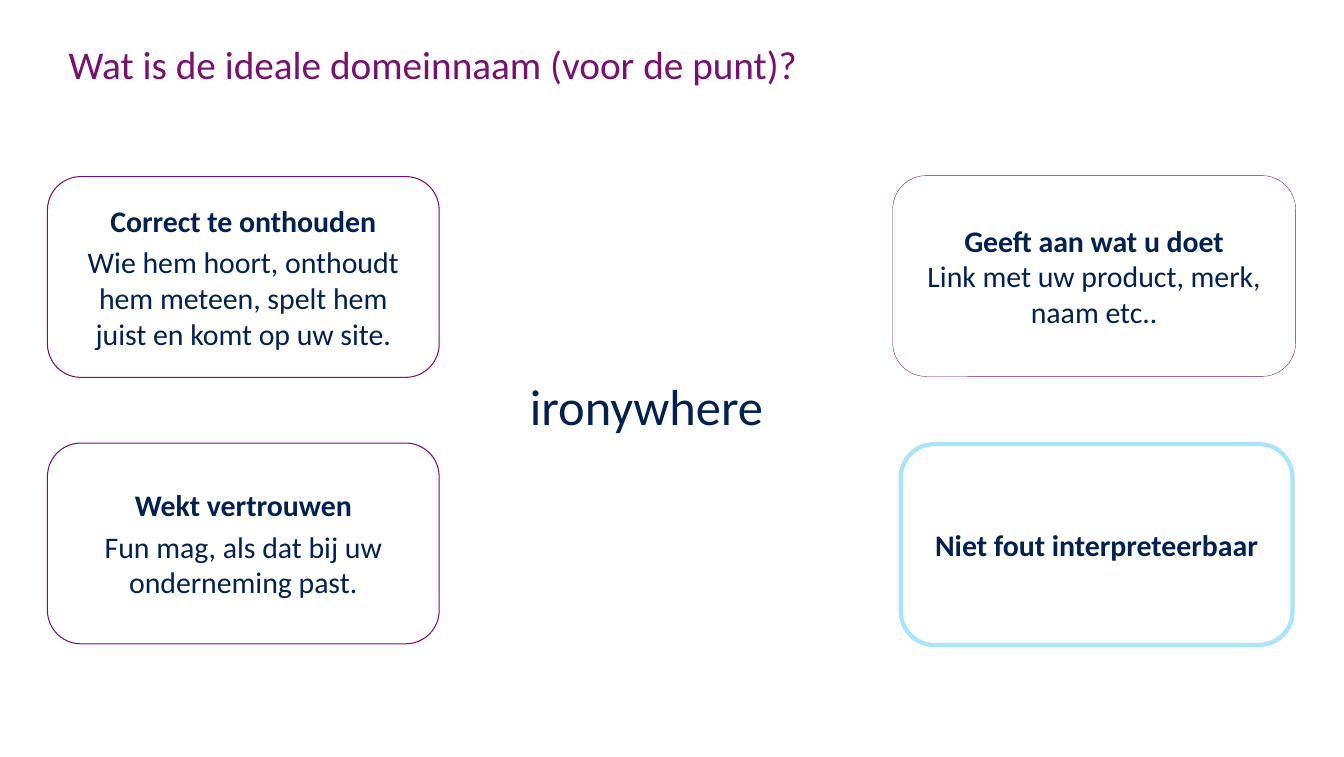
from dataclasses import dataclass

from pptx import Presentation
from pptx.dml.color import RGBColor
from pptx.enum.shapes import MSO_SHAPE
from pptx.enum.text import MSO_ANCHOR, MSO_AUTO_SIZE, PP_ALIGN
from pptx.shapes.autoshape import Shape
from pptx.slide import Slide
from pptx.util import Inches, Pt

ROUND = MSO_SHAPE.ROUNDED_RECTANGLE
MIDDLE, TOP = MSO_ANCHOR.MIDDLE, MSO_ANCHOR.TOP
FIXED = MSO_AUTO_SIZE.NONE
CENTER, LEFT = PP_ALIGN.CENTER, PP_ALIGN.LEFT

PURPLE = RGBColor(0x7B, 0x0F, 0x70)
NAVY = RGBColor(0x00, 0x21, 0x54)
SKY = RGBColor(0xA6, 0xE5, 0xFF)
WHITE = RGBColor(0xFF, 0xFF, 0xFF)

WIDE, HIGH = Inches(13.31), Inches(7.5)


@dataclass(frozen=True)
class Area:
    """A place on the slide, in percent of its width and height."""
    left: float
    top: float
    width: float
    height: float


@dataclass(frozen=True)
class Card:
    area: Area
    head: str
    body: str = ""
    line: RGBColor = PURPLE
    weight: float = 0.75
    joined: bool = False


CARD_W, CARD_H = 29.15, 26.53
CARDS = (
    Card(Area(3.53, 23.33, CARD_W, CARD_H), "Correct te onthouden",
         "Wie hem hoort, onthoudt hem meteen, spelt hem juist en komt op uw site."),
    Card(Area(3.53, 58.53, CARD_W, CARD_H), "Wekt vertrouwen",
         "Fun mag, als dat bij uw onderneming past."),
    Card(Area(66.42, 23.2, 29.98, CARD_H), "Geeft aan wat u doet",
         "Link met uw product, merk, naam etc..", weight=0.25, joined=True),
    Card(Area(67.02, 58.67, CARD_W, CARD_H), "Niet fout interpreteerbaar",
         line=SKY, weight=3),
)
TITLE = Area(3.61, 4.4, 93.76, 9.73)
NAME = Area(38.69, 48.93, 23.67, 9.47)


def style(item: object, **values: object) -> None:
    for key, value in values.items():
        setattr(item, key, value)


def spot(area: Area) -> dict[str, int]:
    return {
        "left": round(WIDE * area.left / 100),
        "top": round(HIGH * area.top / 100),
        "width": round(WIDE * area.width / 100),
        "height": round(HIGH * area.height / 100),
    }


def frame(shape: Shape, side: float, edge: float, anchor: MSO_ANCHOR,
          right: float | None = None) -> None:
    """Set margins in inches; the right one equals the left unless given."""
    style(shape.text_frame, word_wrap=True, auto_size=FIXED,
          vertical_anchor=anchor, margin_left=Inches(side),
          margin_right=Inches(side if right is None else right),
          margin_top=Inches(edge), margin_bottom=Inches(edge))


def write(para: object, text: str, size: float, color: RGBColor,
          bold: bool = False) -> None:
    run = para.add_run()
    run.text = text
    style(run.font, name="Calibri", size=Pt(size), bold=bold)
    run.font.color.rgb = color


def draw_title(slide: Slide) -> None:
    title = slide.shapes.title
    style(title, **spot(TITLE))
    frame(title, 0.2, 0, MIDDLE, right=0.12)
    para = title.text_frame.paragraphs[0]
    style(para, alignment=LEFT, line_spacing=Pt(24))
    write(para, "Wat is de ideale domeinnaam (voor de punt)?", 28, PURPLE)


def draw_card(slide: Slide, card: Card) -> None:
    shape = slide.shapes.add_shape(ROUND, **spot(card.area))
    shape.shadow.inherit = False
    shape.fill.solid()
    shape.fill.fore_color.rgb = WHITE
    shape.line.color.rgb = card.line
    shape.line.width = Pt(card.weight)
    frame(shape, 0.13, 0.07, MIDDLE)
    para = shape.text_frame.paragraphs[0]
    para.alignment = CENTER
    write(para, card.head, 21.3, NAVY, bold=True)
    if not card.body:
        return
    if card.joined:
        para.add_line_break()
    else:
        para = shape.text_frame.add_paragraph()
        style(para, alignment=CENTER, space_before=Pt(4))
    write(para, card.body, 21.3, NAVY)


def draw_name(slide: Slide) -> None:
    box = slide.shapes.add_textbox(**spot(NAME))
    frame(box, 0.1, 0.05, TOP)
    write(box.text_frame.paragraphs[0], "ironywhere", 36, NAVY)


def main() -> None:
    deck = Presentation()
    style(deck, slide_width=WIDE, slide_height=HIGH)
    slide = deck.slides.add_slide(deck.slide_layouts.get_by_name("Title Only"))
    for card in CARDS:
        draw_card(slide, card)
    draw_title(slide)
    draw_name(slide)
    deck.save("out.pptx")


if __name__ == "__main__":
    main()
